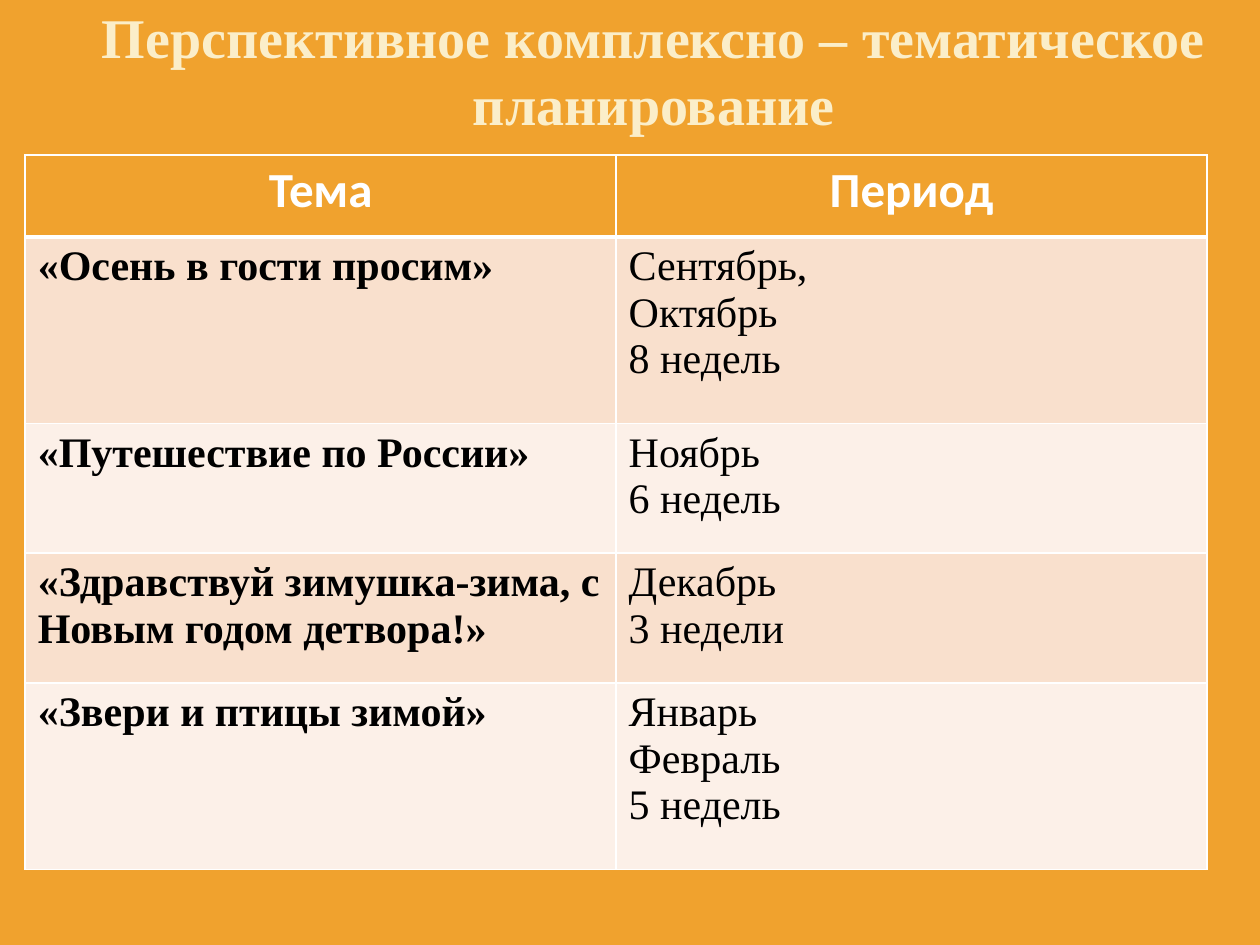
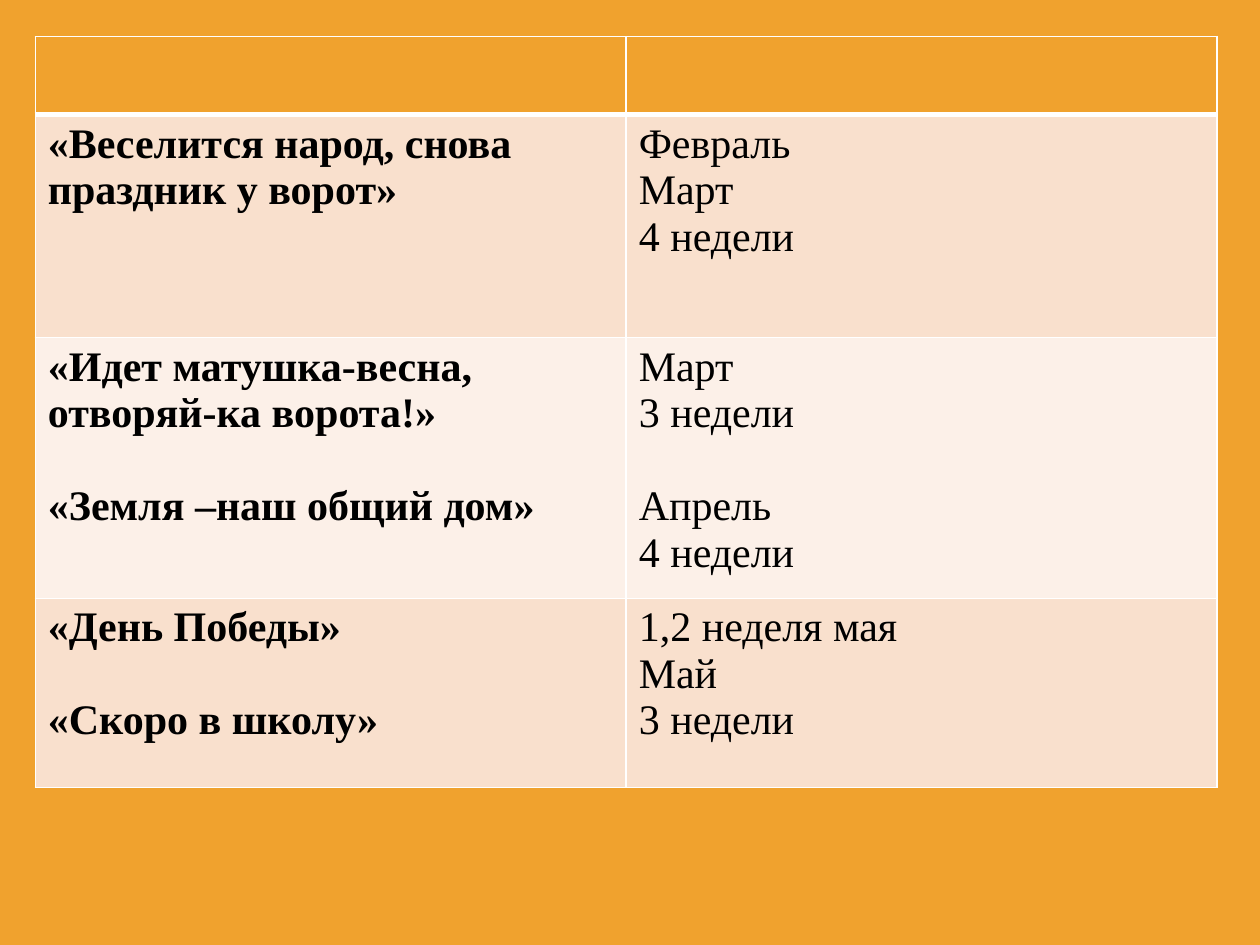
from dataclasses import dataclass
from lxml.etree import SubElement as Sub
from pptx import Presentation
from pptx.dml.color import RGBColor as RGB
from pptx.enum.text import MSO_ANCHOR as Anchor, PP_ALIGN as Align
from pptx.oxml.ns import qn
from pptx.util import Inches, Pt


@dataclass(frozen=True)
class Theme:
    back: str = "F0A22E"
    title: str = "FBEEC9"
    line: str = "FFFFFF"
    ink: str = "000000"
    bands: tuple = ("F9E0CD", "FCF0E8")
    serif: str = "Times New Roman"
    sans: str = "Calibri"
    title_size: float = 32
    head_size: float = 28
    body_size: float = 24
    gap: float = 26.5
    thin: float = 1
    thick: float = 3


T = Theme()
prs = Presentation()
prs.slide_width, prs.slide_height = Inches(10), Inches(7.5)
COL = prs.slide_width / 100
ROW = prs.slide_height / 75
TABLE_COL = 46.9


def write(tf, text, font, size, color, bold, align=Align.LEFT):
    first = True
    for group in text.split("\n\n"):
        for i, line in enumerate(group.split("\n")):
            p = tf.paragraphs[0] if first else tf.add_paragraph()
            p.alignment = align
            if i == 0 and not first:
                p.space_before = Pt(T.gap)
            first = False
            r = p.add_run()
            r.text = line
            r.font.name, r.font.size, r.font.bold = font, Pt(size), bold
            r.font.color.rgb = RGB.from_string(color)


def paint(cell, fill, top, bottom):
    tcPr = cell._tc.get_or_add_tcPr()
    for side, width in (("L", T.thin), ("R", T.thin), ("T", top), ("B", bottom)):
        ln = Sub(tcPr, qn(f"a:ln{side}"), w=str(Pt(width)))
        Sub(Sub(ln, qn("a:solidFill")), qn("a:srgbClr"), val=T.line)
    cell.fill.solid()
    cell.fill.fore_color.rgb = RGB.from_string(fill)


slides = [
    {
        "title": "Перспективное комплексно – тематическое планирование",
        "at": (2, 12.3),
        "heights": (6.5, 14.8, 10.3, 10.3, 14.8),
        "rows": [
            ("Тема", "Период"),
            ("«Осень в гости просим»", "Сентябрь,\nОктябрь\n8 недель"),
            ("«Путешествие по России»", "Ноябрь\n6 недель"),
            ("«Здравствуй зимушка-зима, с Новым годом детвора!»", "Декабрь\n3 недели"),
            ("«Звери и птицы зимой»", "Январь\nФевраль\n5 недель"),
        ],
    },
    {
        "title": "",
        "at": (2.8, 2.9),
        "heights": (6.2, 17.7, 19.4, 15),
        "rows": [
            ("", ""),
            ("«Веселится народ, снова праздник у ворот»", "Февраль\nМарт\n4 недели"),
            ("«Идет матушка-весна, отворяй-ка ворота!»\n\n«Земля –наш общий дом»",
             "Март\n3 недели\n\nАпрель\n4 недели"),
            ("«День Победы»\n\n«Скоро в школу»", "1,2 неделя мая\nМай\n3 недели"),
        ],
    },
]

for page in slides:
    s = prs.slides.add_slide(prs.slide_layouts[6])
    s.background.fill.solid()
    s.background.fill.fore_color.rgb = RGB.from_string(T.back)

    if page["title"]:
        sp = s.shapes.add_textbox(int(3.8 * COL), 0, int(96.2 * COL), int(11 * ROW))
        tf = sp.text_frame
        tf.word_wrap = True
        tf.vertical_anchor = Anchor.MIDDLE
        write(tf, page["title"], T.serif, T.title_size, T.title, True, Align.CENTER)

    left, top = page["at"]
    rows, heights = page["rows"], page["heights"]
    tbl = s.shapes.add_table(len(rows), 2, int(left * COL), int(top * ROW),
                             int(2 * TABLE_COL * COL), int(sum(heights) * ROW)).table
    tbl.horz_banding = False
    for column in tbl.columns:
        column.width = int(TABLE_COL * COL)

    for i, (texts, height) in enumerate(zip(rows, heights)):
        tbl.rows[i].height = int(height * ROW)
        for j, text in enumerate(texts):
            cell = tbl.cell(i, j)
            paint(cell, T.bands[(i - 1) % 2] if i else T.back,
                  T.thick if i == 1 else T.thin, T.thin if i else T.thick)
            if i:
                write(cell.text_frame, text, T.serif, T.body_size, T.ink, j == 0)
            elif text:
                write(cell.text_frame, text, T.sans, T.head_size, T.line, True, Align.CENTER)

prs.save("out.pptx")
